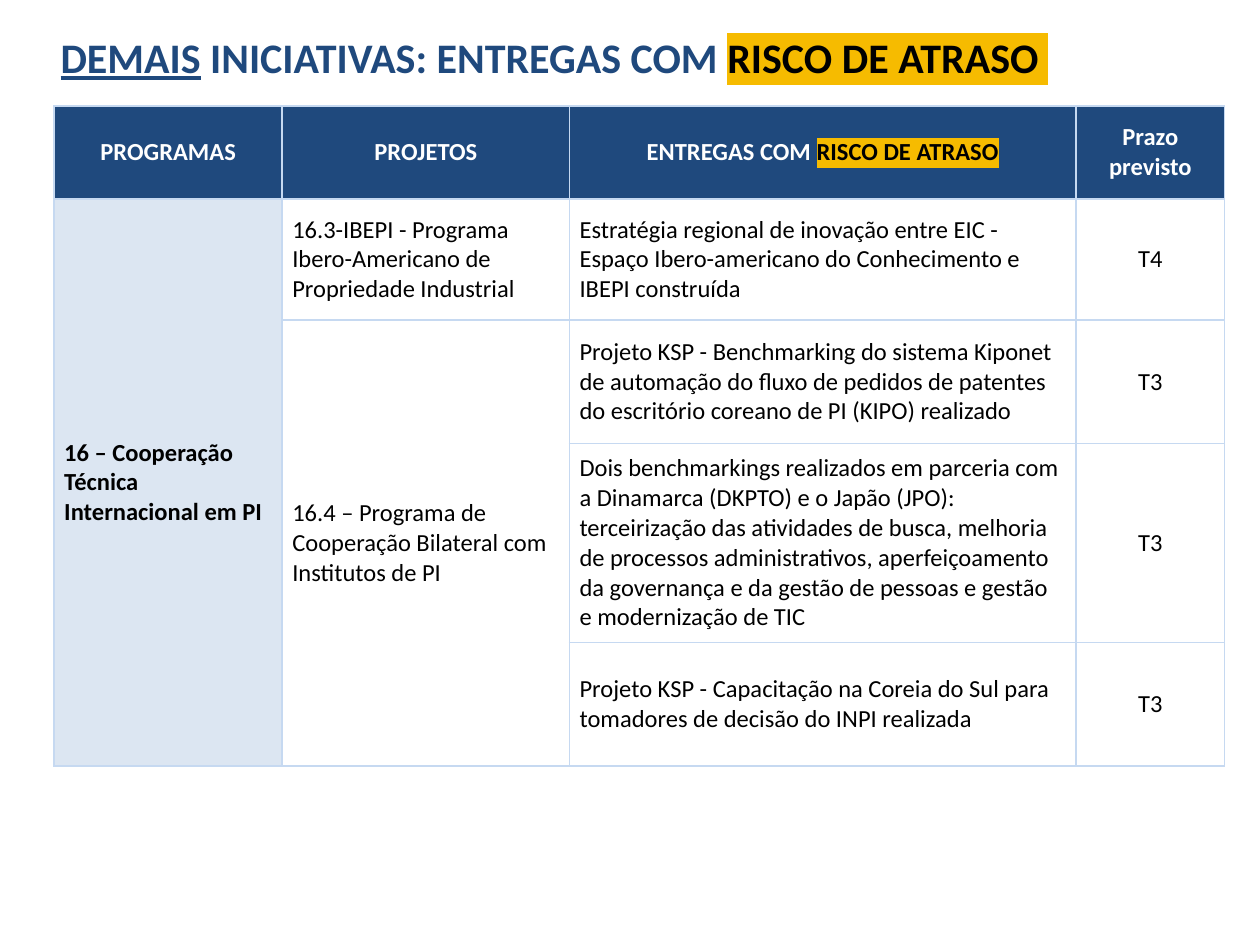
from dataclasses import dataclass

from lxml import etree
from pptx import Presentation
from pptx.dml.color import RGBColor
from pptx.enum.text import MSO_ANCHOR, MSO_AUTO_SIZE, PP_ALIGN
from pptx.oxml.ns import qn
from pptx.util import Inches, Pt

LEFT, CENTER = PP_ALIGN.LEFT, PP_ALIGN.CENTER
TOP, MIDDLE = MSO_ANCHOR.TOP, MSO_ANCHOR.MIDDLE
GROW = MSO_AUTO_SIZE.SHAPE_TO_FIT_TEXT


@dataclass(frozen=True)
class Theme:
    font: str = "Calibri"
    navy: str = "1F497D"
    pale: str = "DCE6F2"
    edge: str = "C6D9F1"
    mark: str = "F6BB00"
    white: str = "FFFFFF"
    black: str = "000000"
    title: int = 24
    body: int = 14
    line: int = 1


THEME = Theme()

COLS = [1.81, 2.28, 4.02, 1.18]
ROWS = [0.74, 0.96, 0.98, 1.58, 0.98]
HEADS = ["PROGRAMAS", "PROJETOS", "ENTREGAS COM ", "Prazo previsto"]
RISK = "RISCO DE ATRASO"
PROGRAM = "16 – Cooperação Técnica Internacional em PI"
# Each project with its deliveries and their due quarters
PROJECTS = [
    ("16.3-IBEPI - Programa Ibero-Americano de Propriedade Industrial", [
        ("Estratégia regional de inovação entre EIC - Espaço Ibero-americano "
         "do Conhecimento e IBEPI construída", "T4"),
    ]),
    ("16.4 – Programa de Cooperação Bilateral com Institutos de PI", [
        ("Projeto KSP - Benchmarking do sistema Kiponet de automação do fluxo "
         "de pedidos de patentes do escritório coreano de PI (KIPO) realizado",
         "T3"),
        ("Dois benchmarkings realizados em parceria com a Dinamarca (DKPTO) e "
         "o Japão (JPO): terceirização das atividades de busca, melhoria de "
         "processos administrativos, aperfeiçoamento da governança e da "
         "gestão de pessoas e gestão e modernização de TIC", "T3"),
        ("Projeto KSP - Capacitação na Coreia do Sul para tomadores de decisão "
         "do INPI realizada", "T3"),
    ]),
]


def write(para, text, size=THEME.body, color=THEME.black, bold=False,
          under=False, mark=None, align=LEFT):
    """Add one formatted run to a paragraph."""
    para.alignment = align
    run = para.add_run()
    run.text = text
    font = run.font
    font.name, font.size, font.bold = THEME.font, Pt(size), bold
    font.underline = under
    font.color.rgb = RGBColor.from_string(color)
    if mark:
        light = etree.Element(qn("a:highlight"))
        etree.SubElement(light, qn("a:srgbClr"), val=mark)
        font._element.find(qn("a:solidFill")).addnext(light)


def style(cell, fill):
    """Set the fill, insets and four borders of a cell."""
    cell.fill.solid()
    cell.fill.fore_color.rgb = RGBColor.from_string(fill)
    cell.vertical_anchor = MIDDLE
    cell.margin_left = cell.margin_right = Inches(0.08)
    cell.margin_top = cell.margin_bottom = Inches(0.08)
    props = cell._tc.get_or_add_tcPr()
    for spot, side in enumerate("LRTB"):
        line = etree.Element(qn(f"a:ln{side}"), w=str(Pt(THEME.line)))
        paint = etree.SubElement(line, qn("a:solidFill"))
        etree.SubElement(paint, qn("a:srgbClr"), val=THEME.edge)
        props.insert(spot, line)


def add_title(slide, left, top, width, height):
    title = slide.shapes.title
    title.left, title.top = Inches(left), Inches(top)
    title.width, title.height = Inches(width), Inches(height)
    frame = title.text_frame
    frame.word_wrap, frame.auto_size = True, GROW
    frame.vertical_anchor = TOP
    frame.margin_left = frame.margin_right = Inches(0.09)
    frame.margin_top = frame.margin_bottom = Inches(0.04)
    para = frame.paragraphs[0]
    look = dict(size=THEME.title, bold=True)
    write(para, "DEMAIS", color=THEME.navy, under=True, **look)
    write(para, " INICIATIVAS: ENTREGAS COM ", color=THEME.navy, **look)
    write(para, RISK + " ", mark=THEME.mark, **look)


def add_grid(slide, left, top, width, height):
    table = slide.shapes.add_table(
        len(ROWS), len(COLS), Inches(left), Inches(top),
        Inches(width), Inches(height)).table
    for col, size in zip(table.columns, COLS):
        col.width = Inches(size * width / sum(COLS))
    for row, size in zip(table.rows, ROWS):
        row.height = Inches(size * height / sum(ROWS))

    # Fills and borders
    for r in range(len(ROWS)):
        for c in range(len(COLS)):
            fill = (THEME.navy if r == 0 else
                    THEME.pale if c == 0 else THEME.white)
            style(table.cell(r, c), fill)

    def put(r, c, text, **look):
        para = table.cell(r, c).text_frame.paragraphs[0]
        write(para, text, **look)

    # Header row
    for c, head in enumerate(HEADS):
        put(0, c, head, color=THEME.white, bold=True, align=CENTER)
    put(0, 2, RISK, bold=True, mark=THEME.mark, align=CENTER)

    # Program, projects and deliveries
    table.cell(1, 0).merge(table.cell(len(ROWS) - 1, 0))
    put(1, 0, PROGRAM, bold=True)
    r = 1
    for name, items in PROJECTS:
        if len(items) > 1:
            table.cell(r, 1).merge(table.cell(r + len(items) - 1, 1))
        put(r, 1, name)
        for item, due in items:
            put(r, 2, item)
            put(r, 3, due, align=CENTER)
            r += 1


def main():
    deck = Presentation()
    deck.slide_width, deck.slide_height = Inches(10), Inches(7.5)
    slide = deck.slides.add_slide(deck.slide_layouts[5])
    add_grid(slide, 0.43, 0.84, sum(COLS), sum(ROWS))
    add_title(slide, 0.39, 0.21, 9.49, 0.49)
    deck.save("out.pptx")


if __name__ == "__main__":
    main()
